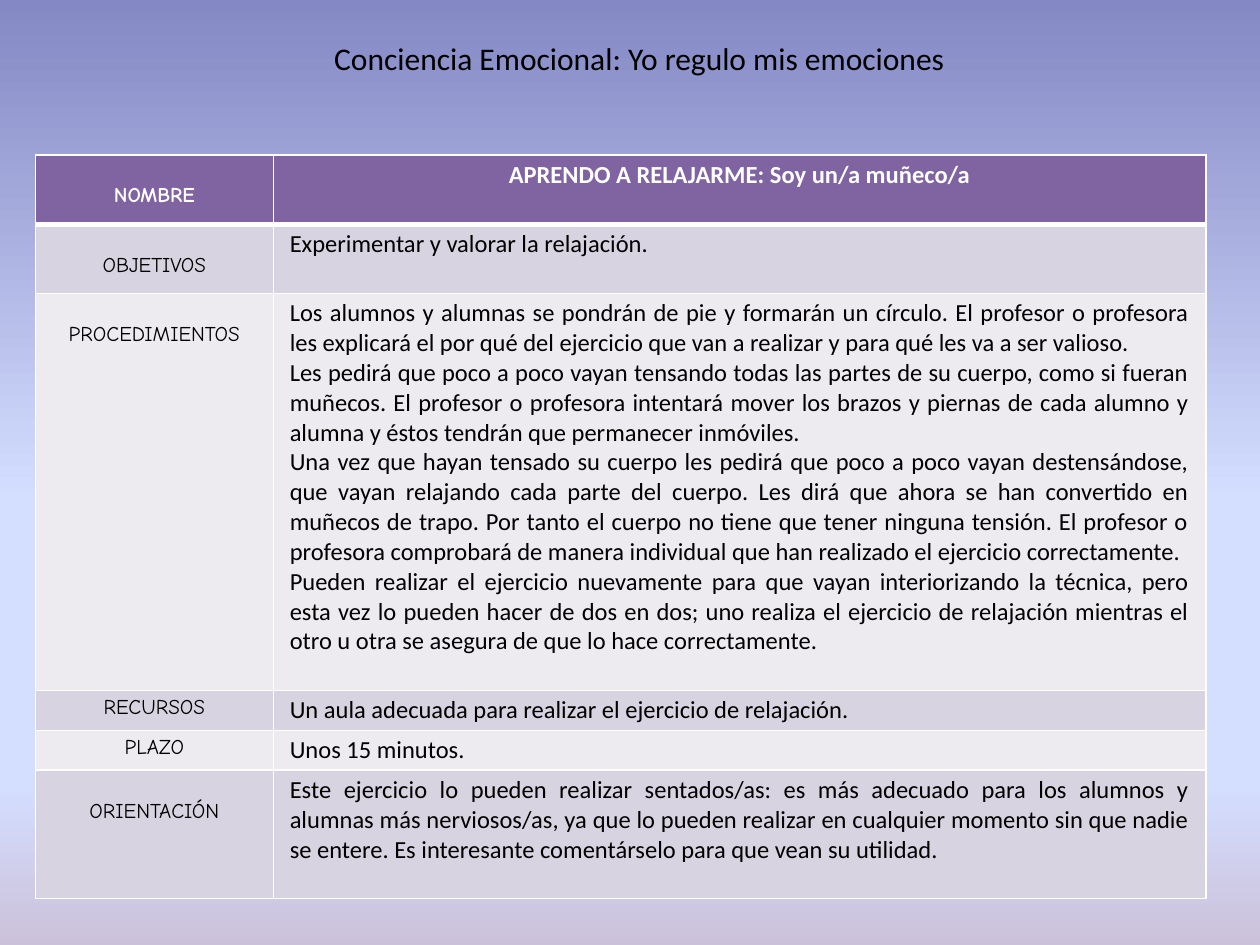
from copy import deepcopy

from lxml import etree
from pptx import Presentation
from pptx.dml.color import RGBColor
from pptx.enum.text import PP_ALIGN
from pptx.oxml.ns import qn
from pptx.util import Inches, Pt

CENTER, JUSTIFY = PP_ALIGN.CENTER, PP_ALIGN.JUSTIFY

TITLE = "Conciencia Emocional: Yo regulo mis emociones"
ROWS = [
    ("NOMBRE", ["APRENDO A RELAJARME: Soy un/a muñeco/a"]),
    ("OBJETIVOS", ["Experimentar y valorar la relajación."]),
    ("PROCEDIMIENTOS", [
        "Los alumnos y alumnas se pondrán de pie y formarán un círculo. El profesor o profesora "
        "les explicará el por qué del ejercicio que van a realizar y para qué les va a ser valioso.",
        "Les pedirá que poco a poco vayan tensando todas las partes de su cuerpo, como si fueran "
        "muñecos. El profesor o profesora intentará mover los brazos y piernas de cada alumno y "
        "alumna y éstos tendrán que permanecer inmóviles.",
        "Una vez que hayan tensado su cuerpo les pedirá que poco a poco vayan destensándose, "
        "que vayan relajando cada parte del cuerpo. Les dirá que ahora se han convertido en "
        "muñecos de trapo. Por tanto el cuerpo no tiene que tener ninguna tensión. El profesor o "
        "profesora comprobará de manera individual que han realizado el ejercicio correctamente.",
        "Pueden realizar el ejercicio nuevamente para que vayan interiorizando la técnica, pero "
        "esta vez lo pueden hacer de dos en dos; uno realiza el ejercicio de relajación mientras el "
        "otro u otra se asegura de que lo hace correctamente.",
    ]),
    ("RECURSOS", ["Un aula adecuada para realizar el ejercicio de relajación."]),
    ("PLAZO", ["Unos 15 minutos."]),
    ("ORIENTACIÓN", [
        "Este ejercicio lo pueden realizar sentados/as: es más adecuado para los alumnos y "
        "alumnas más nerviosos/as, ya que lo pueden realizar en cualquier momento sin que nadie "
        "se entere. Es interesante comentárselo para que vean su utilidad.",
    ]),
]
ROW_HEIGHTS = [0.55, 0.55, 3.15, 0.31, 0.31, 1.02]
COL_WIDTHS = [1.89, 7.4]
TABLE_LEFT, TABLE_TOP = 0.28, 1.23
TALL_ROW = 0.5
PAD_X, PAD_Y, LABEL_DROP = 0.13, 0.04, 0.19

THEME = {
    "title": ("Calibri", 18), "label": ("Comic Neue", 12), "body": ("Calibri", 14),
    "text": "000000", "head_text": "FFFFFF", "line": "FFFFFF",
    "head": "8064A2", "bands": ("EDEAF0", "D8D3E0"),
    "sky": [(0, "8488C4"), (53, "D4DEFF"), (83, "D4DEFF"), (100, "CCC1DA")],
}


def rgb(value):
    return RGBColor.from_string(value)


def write(tf, lines, style, color, align, bold=False):
    for i, line in enumerate(lines):
        p = tf.paragraphs[0] if i == 0 else tf.add_paragraph()
        p.text = line
        p.alignment = align
        p.font.name, size = THEME[style]
        p.font.size = Pt(size)
        p.font.bold = bold
        p.font.color.rgb = rgb(color)


def paint_sky(slide):
    fill = slide.background.fill
    fill.gradient()
    fill.gradient_angle = 270
    stops = slide.background._cSld.find(".//" + qn("a:gsLst"))
    model = deepcopy(stops[0])
    for old in list(stops):
        stops.remove(old)
    for _ in THEME["sky"]:
        stops.append(deepcopy(model))
    for stop, (pos, color) in zip(fill.gradient_stops, THEME["sky"]):
        stop.position = pos / 100
        stop.color.rgb = rgb(color)


def set_borders(cell, widths):
    tc_pr = cell._tc.get_or_add_tcPr()
    for i, (side, width) in enumerate(widths.items()):
        ln = etree.Element(qn("a:ln" + side), w=str(Pt(width)))
        solid = etree.SubElement(ln, qn("a:solidFill"))
        etree.SubElement(solid, qn("a:srgbClr"), val=THEME["line"])
        tc_pr.insert(i, ln)


def add_plan(slide):
    frame = slide.shapes.add_table(
        len(ROWS), len(COL_WIDTHS), Inches(TABLE_LEFT), Inches(TABLE_TOP),
        Inches(sum(COL_WIDTHS)), Inches(sum(ROW_HEIGHTS)))
    table = frame.table
    for col, width in zip(table.columns, COL_WIDTHS):
        col.width = Inches(width)
    for i, ((label, lines), height) in enumerate(zip(ROWS, ROW_HEIGHTS)):
        table.rows[i].height = Inches(height)
        head = i == 0
        color = THEME["head_text" if head else "text"]
        band = THEME["head"] if head else THEME["bands"][i % 2]
        widths = {"L": 1, "R": 1, "T": 3 if i == 1 else 1, "B": 3 if head else 1}
        label_cell, body_cell = table.cell(i, 0), table.cell(i, 1)
        for cell in (label_cell, body_cell):
            cell.fill.solid()
            cell.fill.fore_color.rgb = rgb(band)
            cell.margin_left = cell.margin_right = Inches(PAD_X)
            cell.margin_top = cell.margin_bottom = Inches(PAD_Y)
            set_borders(cell, widths)
        if height > TALL_ROW:
            label_cell.margin_top = Inches(PAD_Y + LABEL_DROP)
        write(label_cell.text_frame, [label], "label", color, CENTER, head)
        write(body_cell.text_frame, lines, "body", color, CENTER if head else JUSTIFY, head)


def main():
    prs = Presentation()
    prs.slide_width, prs.slide_height = Inches(10), Inches(7.5)
    slide = prs.slides.add_slide(prs.slide_layouts[6])
    paint_sky(slide)
    add_plan(slide)
    title = slide.shapes.add_textbox(Inches(2.32), Inches(0.26), Inches(5.51), Inches(0.4))
    title.text_frame.word_wrap = True
    write(title.text_frame, [TITLE], "title", THEME["text"], CENTER)
    prs.save("out.pptx")


if __name__ == "__main__":
    main()
